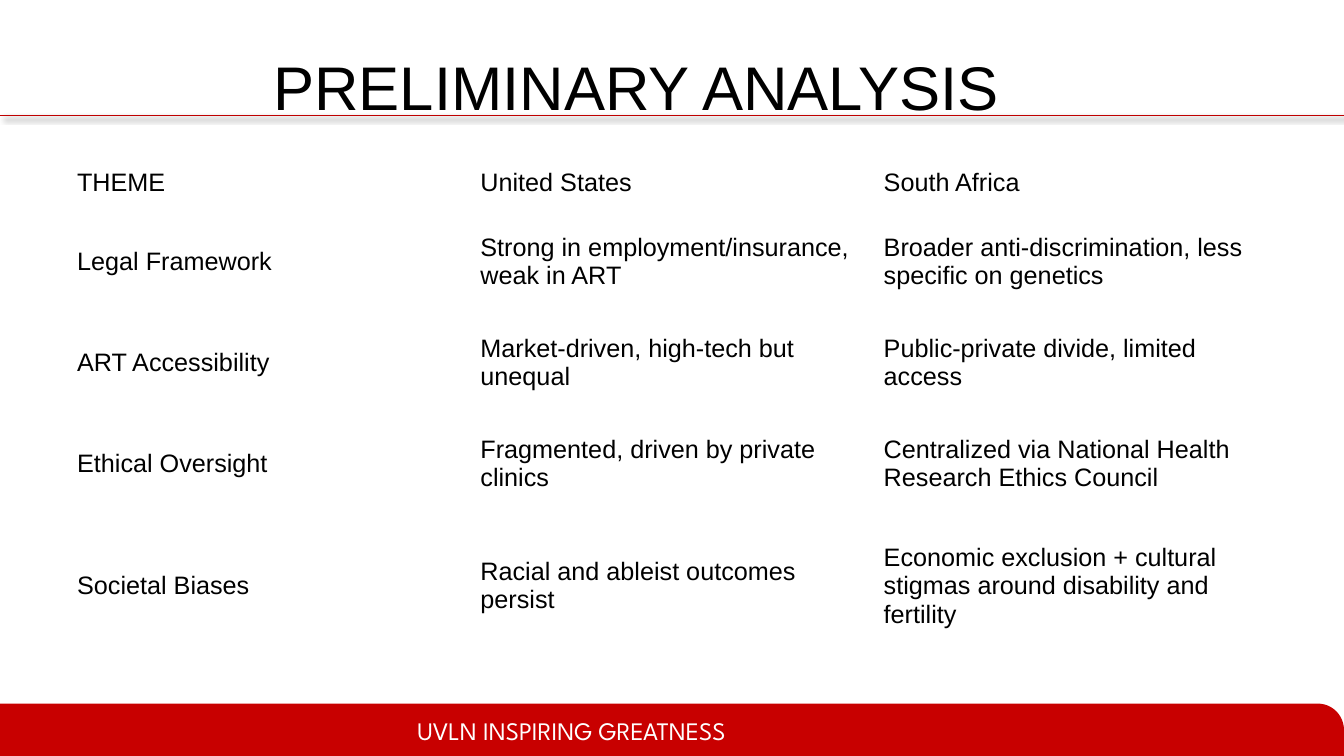
from lxml import etree
from pptx import Presentation
from pptx.dml.color import RGBColor
from pptx.enum.shapes import MSO_CONNECTOR, MSO_SHAPE
from pptx.enum.text import MSO_ANCHOR, MSO_AUTO_SIZE, PP_ALIGN
from pptx.oxml.ns import qn
from pptx.util import Inches, Pt

STRAIGHT = MSO_CONNECTOR.STRAIGHT
BAND_SHAPE = MSO_SHAPE.ROUND_1_RECTANGLE
MIDDLE, BOTTOM = MSO_ANCHOR.MIDDLE, MSO_ANCHOR.BOTTOM
CENTER = PP_ALIGN.CENTER
NO_AUTOFIT, GROW = MSO_AUTO_SIZE.NONE, MSO_AUTO_SIZE.SHAPE_TO_FIT_TEXT

WIDTH, HEIGHT = Inches(13.33), Inches(7.5)
COLORS = {"text": "000000", "rule": "C00000", "band": "C80000",
          "slogan": "FFFFFF", "shadow": "000000"}
BODY_FONT, SLOGAN_FONT = "Arial", "League Spartan"

# Table grid
COLUMN_WIDTH = Inches(4)
ROW_HEIGHTS = [Inches(h) for h in (0.57, 1, 1, 1, 1.43)]
COMPARISON = [
    ("THEME", "United States", "South Africa"),
    ("Legal Framework", "Strong in employment/insurance, weak in ART",
     "Broader anti-discrimination, less specific on genetics"),
    ("ART Accessibility", "Market-driven, high-tech but unequal",
     "Public-private divide, limited access"),
    ("Ethical Oversight", "Fragmented, driven by private clinics",
     "Centralized via National Health Research Ethics Council"),
    ("Societal Biases", "Racial and ableist outcomes persist",
     "Economic exclusion + cultural stigmas around disability and fertility"),
]


def color(name):
    return RGBColor.from_string(COLORS[name])


def write(frame, text, size, font, color_name):
    frame.text = text
    for run in frame.paragraphs[0].runs:
        run.font.size = Pt(size)
        run.font.name = font
        run.font.color.rgb = color(color_name)


def add_rule(slide, y):
    rule = slide.shapes.add_connector(STRAIGHT, 0, y, WIDTH, y)
    rule.line.color.rgb = color("rule")
    rule.line.width = Pt(0.75)
    # Soft shadow down and to the right
    effects = etree.SubElement(rule._element.spPr, qn("a:effectLst"))
    shadow = etree.SubElement(effects, qn("a:outerShdw"), blurRad=str(Pt(4)),
                              dist=str(Pt(3)), dir="2700000", algn="tl",
                              rotWithShape="0")
    tint = etree.SubElement(shadow, qn("a:srgbClr"), val=COLORS["shadow"])
    etree.SubElement(tint, qn("a:alpha"), val="40000")


def add_footer(slide, slogan):
    top = Inches(6.98)
    band = slide.shapes.add_shape(BAND_SHAPE, 0, top, WIDTH, HEIGHT - top)
    band.adjustments[0] = 0.5
    band.shadow.inherit = False
    band.fill.solid()
    band.fill.fore_color.rgb = color("band")
    band.line.fill.background()

    label = slide.shapes.add_textbox(Inches(4.04), Inches(7.05),
                                     Inches(4.72), Inches(0.4))
    label.text_frame.word_wrap = True
    label.text_frame.auto_size = GROW
    write(label.text_frame, slogan, 18, SLOGAN_FONT, "slogan")


def set_title(slide, text):
    title = slide.shapes.title
    title.left, title.top = 0, 0
    title.width, title.height = Inches(12.63), Inches(1.27)
    frame = title.text_frame
    write(frame, text, 44, BODY_FONT, "text")
    frame.auto_size = NO_AUTOFIT
    frame.vertical_anchor = BOTTOM
    frame.paragraphs[0].alignment = CENTER


def add_comparison(slide, rows):
    columns = len(rows[0])
    width = columns * COLUMN_WIDTH
    table = slide.shapes.add_table(len(rows), columns, (WIDTH - width) // 2,
                                   Inches(1.53), width, sum(ROW_HEIGHTS)).table
    table.first_row = table.horz_banding = False
    for table_row, height, texts in zip(table.rows, ROW_HEIGHTS, rows):
        table_row.height = height
        for cell, text in zip(table_row.cells, texts):
            cell.fill.background()
            cell.vertical_anchor = MIDDLE
            write(cell.text_frame, text, 18, BODY_FONT, "text")


def main():
    deck = Presentation()
    deck.slide_width, deck.slide_height = WIDTH, HEIGHT
    slide = deck.slides.add_slide(deck.slide_layouts[5])
    add_rule(slide, Inches(1.15))
    add_footer(slide, "UVLN INSPIRING GREATNESS")
    set_title(slide, "PRELIMINARY ANALYSIS")
    add_comparison(slide, COMPARISON)
    deck.save("out.pptx")


if __name__ == "__main__":
    main()
